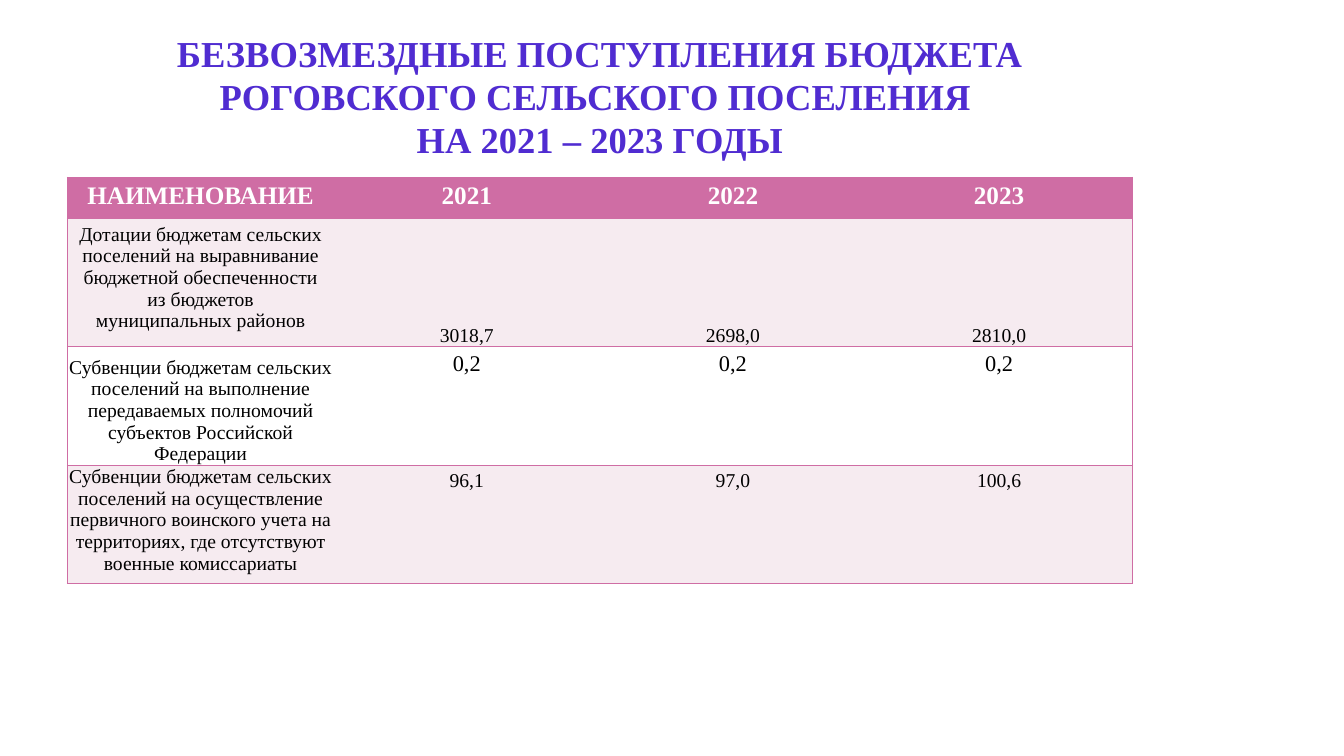
from lxml import etree
from pptx import Presentation
from pptx.dml.color import RGBColor
from pptx.enum.text import MSO_ANCHOR, PP_ALIGN
from pptx.oxml.ns import qn
from pptx.util import Inches, Pt

TOP, BOTTOM = MSO_ANCHOR.TOP, MSO_ANCHOR.BOTTOM
CENTER = PP_ALIGN.CENTER
FONT = "Times New Roman"
COLORS = {"title": "502CD1", "accent": "CF6DA4", "band": "F6EBF0",
          "white": "FFFFFF", "text": "000000"}

# Shared column of the title and the table, in inches
LEFT, WIDTH = 0.67, 10.56
TABLE_TOP = 1.76
ROW_HEIGHTS = [0.41, 1.16, 1.09, 1.09]

# Cell insets: left, top, right, bottom
NORMAL, FLAT, TIGHT = (0.1, 0.05, 0.1, 0.05), (0.07, 0, 0.07, 0), (0.01, 0.01, 0.01, 0)

TITLE = ["БЕЗВОЗМЕЗДНЫЕ ПОСТУПЛЕНИЯ БЮДЖЕТА РОГОВСКОГО СЕЛЬСКОГО ПОСЕЛЕНИЯ ",
         "НА 2021 – 2023 ГОДЫ"]

# Row: texts, (size, inset, anchor) of the name, the same for the values
ROWS = [
    (["НАИМЕНОВАНИЕ", "2021", "2022", "2023"],
     (18, NORMAL, TOP), (18, NORMAL, TOP)),
    (["Дотации бюджетам сельских поселений на выравнивание бюджетной "
      "обеспеченности из бюджетов муниципальных районов", "3018,7", "2698,0", "2810,0"],
     (14, NORMAL, TOP), (14, FLAT, BOTTOM)),
    (["Субвенции бюджетам сельских поселений на выполнение передаваемых "
      "полномочий субъектов Российской Федерации", "0,2", "0,2", "0,2"],
     (14, TIGHT, BOTTOM), (16, NORMAL, TOP)),
    (["Субвенции бюджетам сельских поселений на осуществление первичного воинского "
      "учета на территориях, где отсутствуют военные комиссариаты", "96,1", "97,0", "100,6"],
     (14, TIGHT, TOP), (14, NORMAL, TOP)),
]


def rgb(name):
    return RGBColor.from_string(COLORS[name])


def add_run(p, text, size, color, bold):
    r = p.add_run()
    r.text = text
    r.font.name, r.font.size, r.font.bold = FONT, Pt(size), bold
    r.font.color.rgb = rgb(color)


def set_insets(target, insets):
    (target.margin_left, target.margin_top,
     target.margin_right, target.margin_bottom) = map(Inches, insets)


def set_borders(cell, visible):
    """Draw the named sides in the accent colour and clear the others."""
    tc_pr = cell._tc.get_or_add_tcPr()
    for i, side in enumerate("LRTB"):
        ln = etree.Element(qn(f"a:ln{side}"), w=str(Pt(1)))
        if side in visible:
            fill = etree.SubElement(ln, qn("a:solidFill"))
            etree.SubElement(fill, qn("a:srgbClr"), val=COLORS["accent"])
        else:
            etree.SubElement(ln, qn("a:noFill"))
        tc_pr.insert(i, ln)


def fill_cell(cell, text, style, fill, header):
    size, insets, anchor = style
    set_insets(cell, insets)
    cell.vertical_anchor = anchor
    cell.fill.solid()
    cell.fill.fore_color.rgb = rgb(fill)
    p = cell.text_frame.paragraphs[0]
    p.alignment = CENTER
    add_run(p, text, size, "white" if header else "text", header)


def add_title(s):
    sp = s.shapes.add_textbox(Inches(LEFT), Inches(0.35), Inches(WIDTH), Inches(1.25))
    tf = sp.text_frame
    tf.word_wrap = True
    tf.vertical_anchor = BOTTOM
    set_insets(tf, (0.05, 0, 0.05, 0))
    p = tf.paragraphs[0]
    p.alignment = CENTER
    p.line_spacing = Pt(31)
    for i, line in enumerate(TITLE):
        if i:
            p.add_line_break()
        add_run(p, line, 26.1, "title", True)


def add_income_table(s):
    cols = len(ROWS[0][0])
    table = s.shapes.add_table(len(ROWS), cols, Inches(LEFT), Inches(TABLE_TOP),
                               Inches(WIDTH), Inches(sum(ROW_HEIGHTS))).table
    for i, (texts, name_style, value_style) in enumerate(ROWS):
        table.rows[i].height = Inches(ROW_HEIGHTS[i])
        fill = "accent" if i == 0 else "band" if i % 2 else "white"
        for j, text in enumerate(texts):
            cell = table.cell(i, j)
            fill_cell(cell, text, value_style if j else name_style, fill, i == 0)
            outer = {0: "L", cols - 1: "R"}.get(j, "")
            set_borders(cell, "TB" + outer)


def main():
    prs = Presentation()
    prs.slide_width, prs.slide_height = Inches(13.33), Inches(7.5)
    s = prs.slides.add_slide(prs.slide_layouts[6])
    add_title(s)
    add_income_table(s)
    prs.save("out.pptx")


if __name__ == "__main__":
    main()
